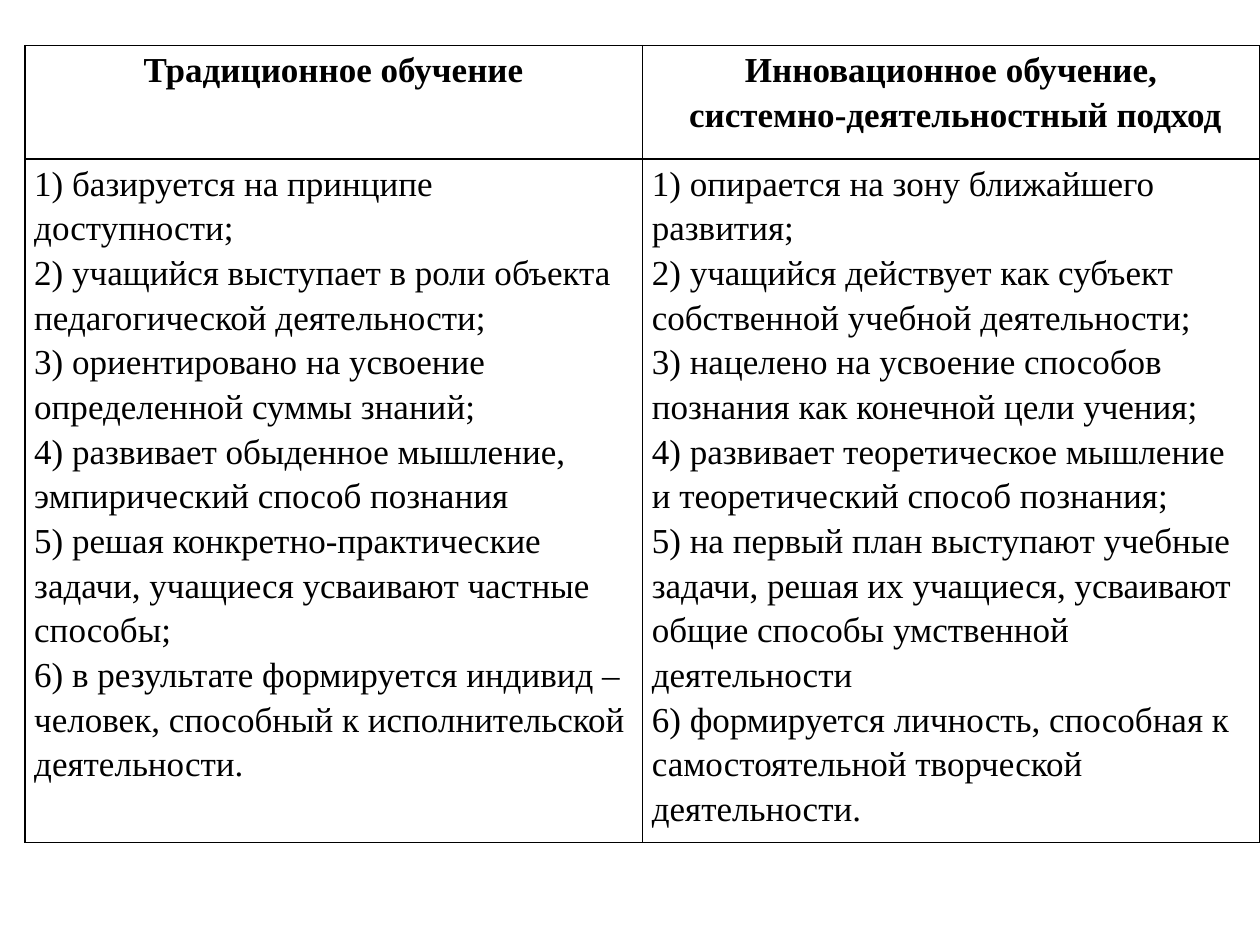
from lxml.etree import SubElement
from pptx import Presentation
from pptx.dml.color import RGBColor
from pptx.enum.text import PP_ALIGN
from pptx.oxml.ns import qn
from pptx.util import Cm, Pt

BLACK = RGBColor(0, 0, 0)
FONT = "Times New Roman"

HEADERS = [
    ["Традиционное обучение"],
    ["Инновационное обучение,", " системно-деятельностный подход"],
]
FEATURES = [
    [
        "1) базируется на принципе доступности;",
        "2) учащийся выступает в роли объекта педагогической деятельности;",
        "3) ориентировано на усвоение определенной суммы знаний;",
        "4) развивает обыденное мышление, эмпирический способ познания",
        "5) решая конкретно-практические задачи, учащиеся усваивают частные способы;",
        "6) в результате формируется индивид – человек, способный к исполнительской деятельности.",
    ],
    [
        "1) опирается на зону ближайшего развития;",
        "2) учащийся действует как субъект собственной учебной деятельности;",
        "3) нацелено на усвоение способов познания как конечной цели учения;",
        "4) развивает теоретическое мышление и теоретический способ познания;",
        "5) на первый план выступают учебные задачи, решая их учащиеся, усваивают общие способы умственной деятельности",
        "6) формируется личность, способная к самостоятельной творческой деятельности.",
    ],
]
ROWS = [HEADERS, FEATURES]
ROW_HEIGHTS = [Cm(2.29), Cm(13.77)]
COL_WIDTH = Cm(12.45)


def add_borders(cell):
    tcPr = cell._tc.get_or_add_tcPr()
    for side in ("a:lnL", "a:lnR", "a:lnT", "a:lnB"):
        ln = SubElement(tcPr, qn(side), w=str(Pt(1)))
        fill = SubElement(ln, qn("a:solidFill"))
        SubElement(fill, qn("a:srgbClr"), val=str(BLACK))


def fill_cell(cell, lines, is_header):
    add_borders(cell)
    cell.fill.background()
    cell.margin_left = cell.margin_right = Cm(0.19)
    cell.margin_top = cell.margin_bottom = 0
    tf = cell.text_frame
    tf.text = "\n".join(lines)
    for p in tf.paragraphs:
        p.alignment = PP_ALIGN.CENTER if is_header else PP_ALIGN.LEFT
        p.line_spacing = 1.15
        for r in p.runs:
            r.font.name = FONT
            r.font.size = Pt(20)
            r.font.bold = is_header
            r.font.color.rgb = BLACK


prs = Presentation()
prs.slide_width, prs.slide_height = Cm(25.4), Cm(19.05)
s = prs.slides.add_slide(prs.slide_layouts[6])

table = s.shapes.add_table(
    len(ROWS), len(HEADERS), Cm(0.5), Cm(0.92),
    COL_WIDTH * len(HEADERS), sum(ROW_HEIGHTS),
).table
table.horz_banding = False
for column in table.columns:
    column.width = COL_WIDTH
for i, (cells, height) in enumerate(zip(ROWS, ROW_HEIGHTS)):
    table.rows[i].height = height
    for j, lines in enumerate(cells):
        fill_cell(table.cell(i, j), lines, is_header=i == 0)

prs.save("out.pptx")
